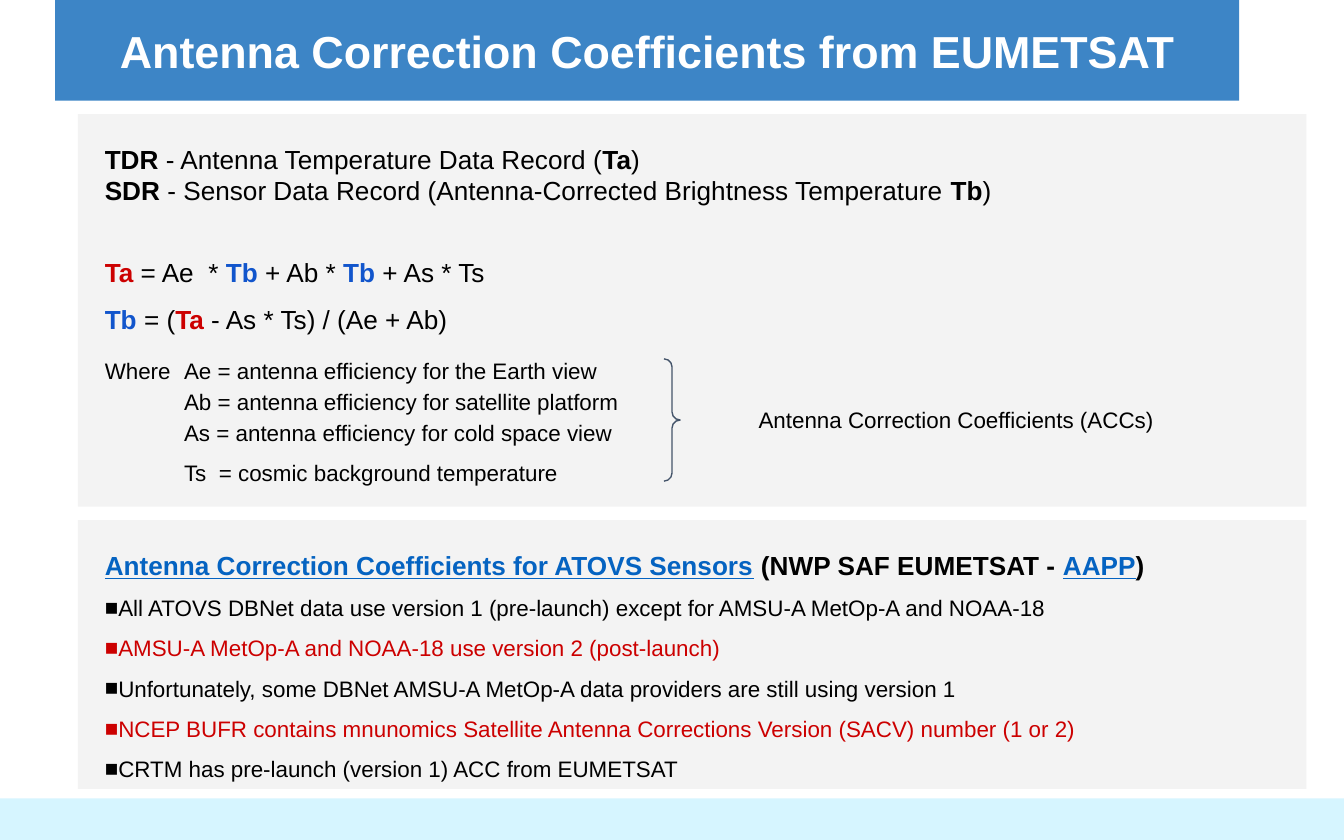
from pptx import Presentation
from pptx import util as u
from pptx.dml.color import RGBColor
from pptx.enum import shapes, text
from pptx.oxml import parse_xml
from pptx.oxml.ns import nsdecls

BLACK, RED, BLUE, LINK = "000000", "CC0000", "1155CC", "0563C1"
PANEL = "F3F3F3"
TERM_INDENT = 0.59
BULLET_INDENT = 0.1

TA = ("Ta", RED, True)
TB = ("Tb", BLUE, True)
DEFINITIONS = [
    [("TDR", BLACK, True), (" - Antenna Temperature Data Record (",), ("Ta", BLACK, True), (")",)],
    [("SDR", BLACK, True), (" - Sensor Data Record (Antenna-Corrected Brightness Temperature ",),
     ("Tb", BLACK, True), (")",)],
]
EQUATIONS = [
    [TA, (" = Ae  * ",), TB, (" + Ab * ",), TB, (" + As * Ts",)],
    [TB, (" = (",), TA, (" - As * Ts) / (Ae + Ab)",)],
]
TERMS = [
    "Where\tAe = antenna efficiency for the Earth view",
    "Ab = antenna efficiency for satellite platform",
    "As = antenna efficiency for cold space view",
    "Ts  = cosmic background temperature",
]
SOURCE_HEADING = [
    ("Antenna Correction Coefficients for ATOVS Sensors", LINK, True, True),
    (" (NWP SAF EUMETSAT - ", BLACK, True),
    ("AAPP", LINK, True, True),
    (")", BLACK, True),
]
FINDINGS = [
    ("All ATOVS DBNet data use version 1 (pre-launch) except for AMSU-A MetOp-A and NOAA-18", BLACK),
    ("AMSU-A MetOp-A and NOAA-18 use version 2 (post-launch)", RED),
    ("Unfortunately, some DBNet AMSU-A MetOp-A data providers are still using version 1", BLACK),
    ("NCEP BUFR contains mnunomics Satellite Antenna Corrections Version (SACV) number (1 or 2)", RED),
    ("CRTM has pre-launch (version 1) ACC from EUMETSAT", BLACK),
]


def color(value):
    """Turn a hex string into a colour."""
    return RGBColor.from_string(value)


def place(box, left, top, width, height):
    """Set the position and size of a shape in inches."""
    box.left, box.top = u.Inches(left), u.Inches(top)
    box.width, box.height = u.Inches(width), u.Inches(height)


def set_frame(box, anchor, left, top, right, bottom):
    """Set the wrapping, anchor and insets of a text frame."""
    frame = box.text_frame
    frame.word_wrap = True
    frame.auto_size = text.MSO_AUTO_SIZE.NONE
    frame.vertical_anchor = anchor
    frame.margin_left, frame.margin_top = u.Inches(left), u.Inches(top)
    frame.margin_right, frame.margin_bottom = u.Inches(right), u.Inches(bottom)


def format_span(span, size, fill=BLACK, bold=False, underline=False):
    """Set the font of one run."""
    font = span.font
    font.name, font.size = "Arial", u.Pt(size)
    font.bold, font.underline = bold, underline
    font.color.rgb = color(fill)


def add_panel(page, left, top, width, height, fill=PANEL):
    """Add a flat filled rectangle."""
    box = page.shapes.add_shape(shapes.MSO_SHAPE.RECTANGLE, 0, 0, 0, 0)
    place(box, left, top, width, height)
    box.shadow.inherit = False
    box.fill.solid()
    box.fill.fore_color.rgb = color(fill)
    box.line.fill.background()
    return box


def add_content_panel(page, top, height):
    """Add a wide panel for left-aligned text."""
    box = add_panel(page, 0.58, top, 9.14, height)
    set_frame(box, text.MSO_ANCHOR.TOP, 0.2, 0.1, 0.1, 0.1)
    return box


def add_para(box, spans, size, spacing, before=0):
    """Add a paragraph of spans, using the empty first one if it is free."""
    frame = box.text_frame
    para = frame.paragraphs[0]
    if para.runs:
        para = frame.add_paragraph()
    para.alignment = text.PP_ALIGN.LEFT
    para.line_spacing = spacing
    para.space_before = u.Pt(before)
    for words, *style in spans:
        span = para.add_run()
        span.text = words
        format_span(span, size, *style)
    return para


def set_indent(para, left, first):
    """Set the left margin and first-line indent of a paragraph."""
    properties = para._p.get_or_add_pPr()
    properties.set("marL", str(u.Inches(left)))
    properties.set("indent", str(u.Inches(first)))
    return properties


def add_bullet(box, words, fill):
    """Add a square-bulleted paragraph in one colour."""
    para = add_para(box, [(words, fill)], 12, 1.5)
    properties = set_indent(para, BULLET_INDENT, -BULLET_INDENT)
    namespace = nsdecls("a")
    properties.append(parse_xml(f'<a:buClr {namespace}><a:srgbClr val="{fill}"/></a:buClr>'))
    properties.append(parse_xml(f'<a:buFont {namespace} typeface="Arial"/>'))
    properties.append(parse_xml(f'<a:buChar {namespace} char="■"/>'))


def set_line(box, words, size, fill, bold=False):
    """Write one centred line of text."""
    box.text_frame.text = words
    para = box.text_frame.paragraphs[0]
    para.alignment = text.PP_ALIGN.CENTER
    format_span(para.runs[0], size, fill, bold)


def set_title(page, words):
    """Place and format the title placeholder."""
    title = page.shapes.title
    place(title, 0.41, 0, 8.81, 0.75)
    title.fill.solid()
    title.fill.fore_color.rgb = color("3D85C6")
    set_frame(title, text.MSO_ANCHOR.MIDDLE, 0.08, 0.04, 0.08, 0.04)
    set_line(title, words, 24, "FFFFFF", True)


def add_equations_panel(page):
    """Add the definitions, equations and terms."""
    box = add_content_panel(page, 0.85, 2.92)
    for spans, spacing in zip(DEFINITIONS, (1.5, 1)):
        add_para(box, spans, 14, spacing)
    for spans, before in zip(EQUATIONS, (18.5, 0)):
        add_para(box, spans, 14, 1.5, before)
    for words, spacing, before in zip(TERMS, (1.15, 1.15, 1.15, 1.5), (10, 0, 0, 0)):
        para = add_para(box, [(words,)], 12, spacing, before)
        set_indent(para, TERM_INDENT, -TERM_INDENT if "\t" in words else 0)


def add_brace(page):
    """Add the brace that groups the terms, with its label."""
    label = add_panel(page, 5.47, 2.94, 3.29, 0.37)
    set_frame(label, text.MSO_ANCHOR.MIDDLE, 0.1, 0.1, 0.1, 0.1)
    set_line(label, "Antenna Correction Coefficients (ACCs)", 12, BLACK)
    brace = page.shapes.add_shape(shapes.MSO_SHAPE.RIGHT_BRACE, 0, 0, 0, 0)
    place(brace, 4.94, 2.67, 0.12, 0.91)
    brace.adjustments[0] = brace.adjustments[1] = 0.5
    brace.shadow.inherit = False
    brace.fill.background()
    brace.line.color.rgb = color("44546A")
    brace.line.width = u.Pt(0.75)


def add_findings_panel(page):
    """Add the source heading and the bulleted findings."""
    box = add_content_panel(page, 3.87, 2)
    add_para(box, SOURCE_HEADING, 14, 1.5)
    for words, fill in FINDINGS:
        add_bullet(box, words, fill)


def main():
    """Build and save the deck."""
    deck = Presentation()
    deck.slide_width, deck.slide_height = u.Inches(10), u.Inches(6.25)
    page = deck.slides.add_slide(deck.slide_layouts[5])
    add_panel(page, 0, 5.94, 10, 0.31, "D6F5FF")
    set_title(page, "Antenna Correction Coefficients from EUMETSAT")
    add_equations_panel(page)
    add_brace(page)
    add_findings_panel(page)
    deck.save("out.pptx")


if __name__ == "__main__":
    main()
